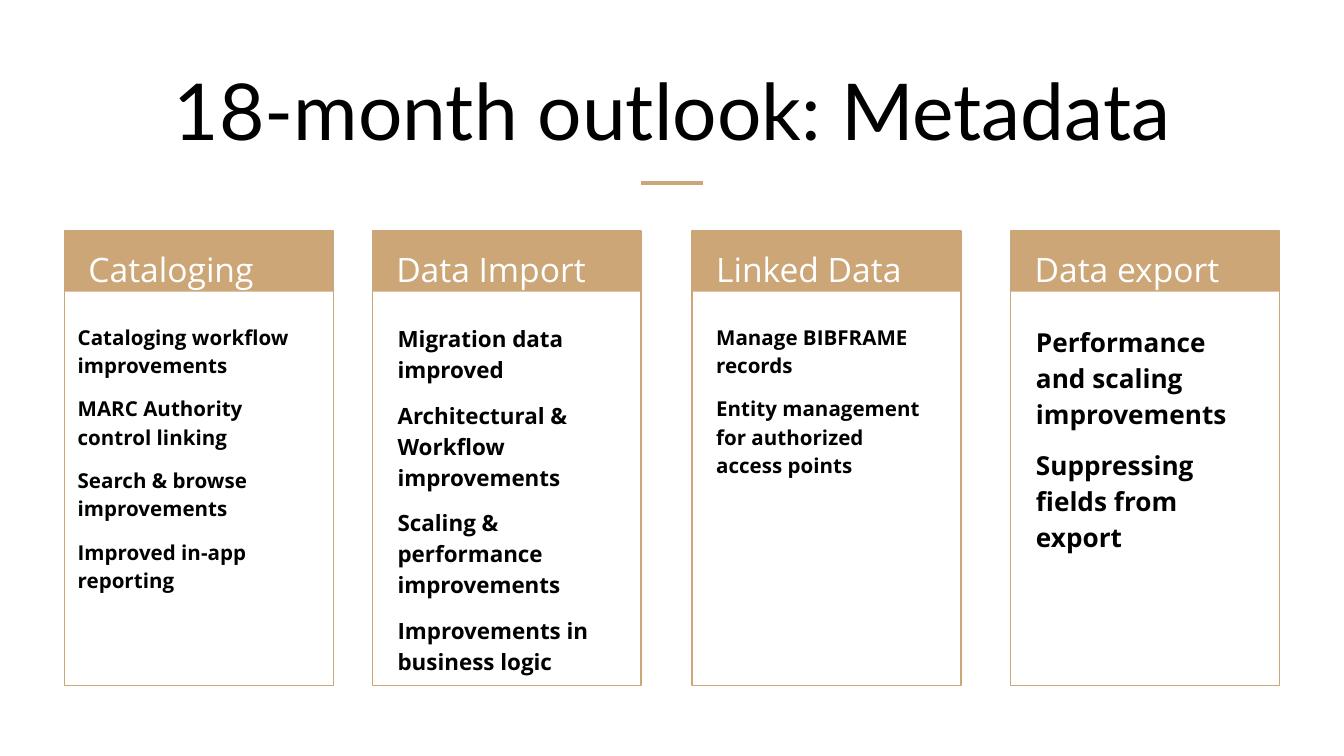
from dataclasses import dataclass

from lxml import etree
from pptx import Presentation
from pptx import util as u
from pptx.dml.color import RGBColor
from pptx.enum import shapes, text
from pptx.oxml.ns import qn


@dataclass(frozen=True)
class Theme:
    """Colours, fonts and type sizes of the slide."""
    accent: RGBColor = RGBColor(0xCC, 0xA6, 0x77)
    ink: RGBColor = RGBColor(0, 0, 0)
    paper: RGBColor = RGBColor(0xFF, 0xFF, 0xFF)
    title_font: str = "Lato"
    body_font: str = "Open Sans"
    title_size: int = 42
    heading_size: int = 18
    line_spacing: float = 1.15
    item_gap: int = 8


@dataclass(frozen=True)
class Column:
    """One topic: its place, heading, items and type size."""
    left: float
    heading: str
    items: tuple
    size: int
    item_inset: float = 0.09
    item_width: float = 1.81


THEME = Theme()
COLUMN_TOP, COLUMN_WIDTH, COLUMN_HEIGHT = 1.72, 2, 3.38
COLUMNS = (
    Column(0.48, "Cataloging", (
        "Cataloging workflow improvements",
        "MARC Authority control linking",
        "Search & browse improvements",
        "Improved in-app reporting"), 11, 0, 2),
    Column(2.77, "Data Import", (
        "Migration data improved",
        "Architectural & Workflow improvements",
        "Scaling & performance improvements",
        "Improvements in business logic"), 12),
    Column(5.15, "Linked Data", (
        "Manage BIBFRAME records",
        "Entity management for authorized access points"), 11, 0.08),
    Column(7.52, "Data export", (
        "Performance and scaling improvements",
        "Suppressing fields from export"), 14),
)


def inches(*lengths):
    """Convert several lengths to slide units."""
    return [u.Inches(length) for length in lengths]


def set_margins(frame):
    """Wrap the text and give it an even inset."""
    frame.word_wrap = True
    frame.margin_left = frame.margin_right = u.Inches(0.1)
    frame.margin_top = frame.margin_bottom = u.Inches(0.1)


def add_run(paragraph, words, font, size, color, bold=False):
    """Add one formatted run."""
    run = paragraph.add_run()
    run.text = words
    run.font.name, run.font.size = font, u.Pt(size)
    run.font.color.rgb, run.font.bold = color, bold


def add_copy(slide, box, lines, size, color, bold=False):
    """Add a text box with one paragraph per line."""
    frame = slide.shapes.add_textbox(*inches(*box)).text_frame
    set_margins(frame)
    for index, line in enumerate(lines):
        paragraph = frame.paragraphs[0] if index == 0 else frame.add_paragraph()
        paragraph.line_spacing = THEME.line_spacing
        paragraph.space_before = u.Pt(THEME.item_gap if index else 0)
        add_run(paragraph, line, THEME.body_font, size, color, bold)


def add_title(slide, box, words):
    """Place the title and the short rule beneath it."""
    left, top, width, height = box
    title = slide.shapes.title
    title.left, title.top, title.width, title.height = inches(*box)
    frame = title.text_frame
    set_margins(frame)
    frame.auto_size = text.MSO_AUTO_SIZE.NONE
    frame.vertical_anchor = text.MSO_ANCHOR.BOTTOM
    paragraph = frame.paragraphs[0]
    paragraph.alignment = text.PP_ALIGN.CENTER
    add_run(paragraph, words, THEME.title_font, THEME.title_size, THEME.ink)

    center, rule_y, half = left + width / 2, top + height + 0.1, 0.23
    rule = slide.shapes.add_connector(
        shapes.MSO_CONNECTOR.STRAIGHT,
        *inches(center - half, rule_y, center + half, rule_y))
    rule.line.color.rgb, rule.line.width = THEME.accent, u.Pt(2.25)
    etree.SubElement(rule._element.spPr, qn("a:effectLst"))


def add_column(slide, box, column):
    """Place a framed card with its heading band and items."""
    left, top, width, height = box
    band_height, heading_inset, heading_rise, items_drop = 0.45, 0.08, 0.01, 0.57
    card = slide.shapes.add_group_shape()
    border = card.shapes.add_shape(shapes.MSO_SHAPE.RECTANGLE, *inches(*box))
    border.fill.background()
    border.line.color.rgb, border.line.width = THEME.accent, u.Pt(0.75)
    band = card.shapes.add_shape(
        shapes.MSO_SHAPE.RECTANGLE, *inches(left, top, width, band_height))
    band.fill.solid()
    band.fill.fore_color.rgb = THEME.accent
    band.line.fill.background()
    for part in (border, band):
        part.shadow.inherit = False

    add_copy(slide,
             (left + heading_inset, top - heading_rise,
              width - heading_inset, band_height),
             [column.heading], THEME.heading_size, THEME.paper)
    add_copy(slide,
             (left + column.item_inset, top + items_drop,
              column.item_width, height - items_drop),
             column.items, column.size, THEME.ink, True)


def main():
    """Build and save the slide."""
    deck = Presentation()
    deck.slide_width = u.Inches(10)
    deck.slide_height = deck.slide_width * 9 // 16
    slide = deck.slides.add_slide(deck.slide_layouts[5])
    slide.background.fill.solid()
    slide.background.fill.fore_color.rgb = THEME.paper
    add_title(slide, (0.34, 0.35, 9.32, 0.91), "18-month outlook: Metadata")
    for column in COLUMNS:
        add_column(slide,
                   (column.left, COLUMN_TOP, COLUMN_WIDTH, COLUMN_HEIGHT), column)
    deck.save("out.pptx")


if __name__ == "__main__":
    main()
